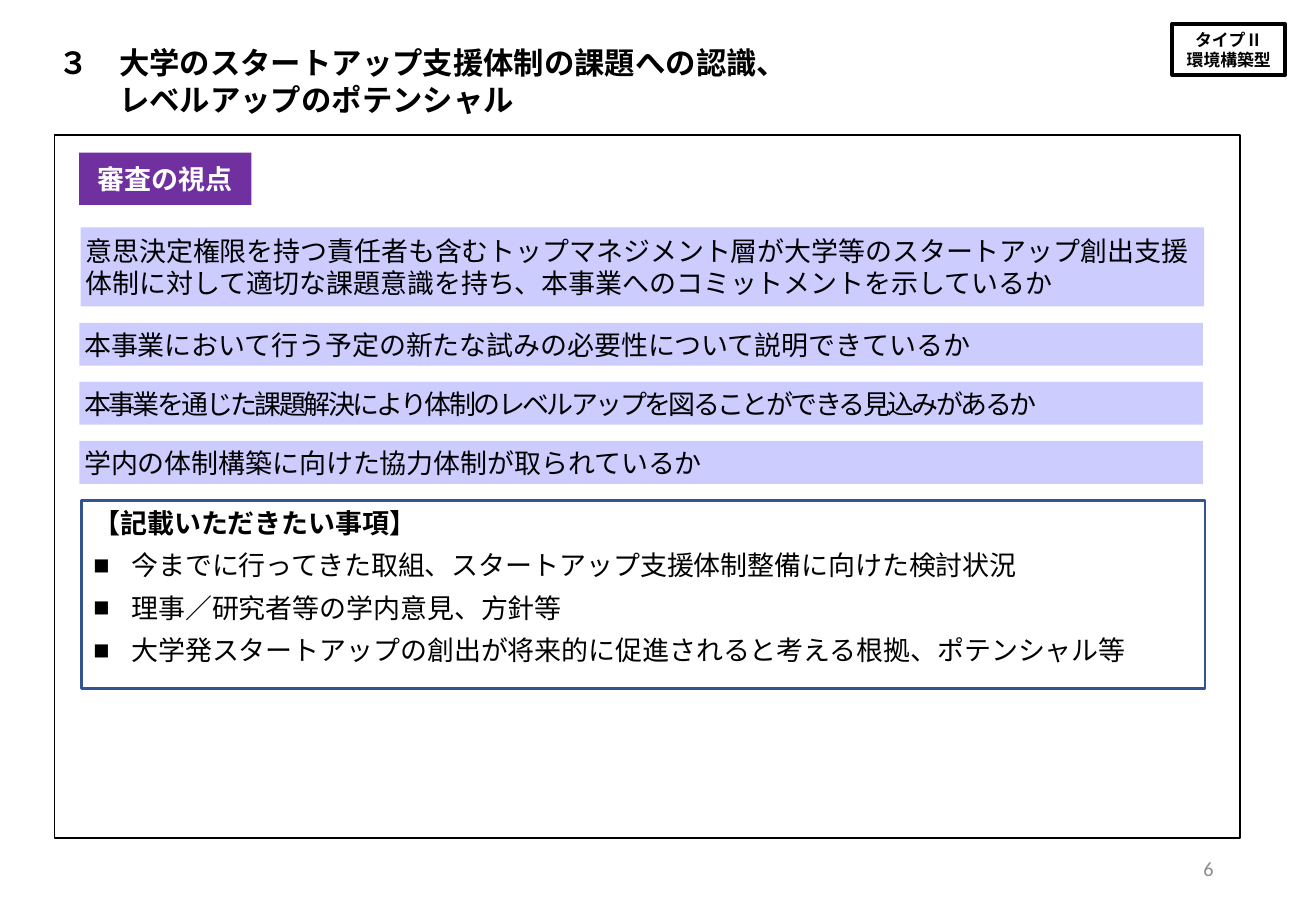
from dataclasses import dataclass

from lxml.etree import SubElement
from pptx import Presentation
from pptx.dml.color import RGBColor
from pptx.enum.shapes import MSO_SHAPE
from pptx.enum.text import MSO_ANCHOR, MSO_AUTO_SIZE, PP_ALIGN
from pptx.oxml.ns import qn
from pptx.util import Pt


@dataclass(frozen=True)
class Theme:
    black: str = "000000"
    white: str = "FFFFFF"
    purple: str = "7030A0"
    lavender: str = "CCCCFF"
    blue: str = "325491"
    gray: str = "8C8C8C"
    heading: int = 18
    body: int = 16
    number: int = 12
    badge: int = 10
    latin: str = "Arial"
    title: str = "Calibri"
    east_asian: str = "Calibri"
    criterion: str = "Noto Sans CJK JP"


THEME = Theme()
INSET = 2.88

CRITERIA = [
    ("本事業において行う予定の新たな試みの必要性について説明できているか", THEME.title, 0),
    ("本事業を通じた課題解決により体制のレベルアップを図ることができる見込みがあるか", THEME.title, -1.5),
    ("学内の体制構築に向けた協力体制が取られているか", THEME.latin, 0),
]
ITEMS = [
    "今までに行ってきた取組、スタートアップ支援体制整備に向けた検討状況",
    "理事／研究者等の学内意見、方針等",
    "大学発スタートアップの創出が将来的に促進されると考える根拠、ポテンシャル等",
]


def place(sp, left, top, width, height):
    sp.left, sp.top, sp.width, sp.height = Pt(left), Pt(top), Pt(width), Pt(height)


def style(p, size, color, font=THEME.latin, bold=False, align=PP_ALIGN.LEFT, spacing=0):
    p.alignment = align
    p.font.size = Pt(size)
    p.font.bold = bold
    p.font.name = font
    p.font.color.rgb = RGBColor.from_string(color)
    props = p.font._element
    SubElement(props, qn("a:ea")).set("typeface", THEME.east_asian)
    if spacing:
        props.set("spc", str(int(spacing * 100)))


def write(sp, lines, size, color, inset=INSET, anchor=MSO_ANCHOR.MIDDLE, **look):
    tf = sp.text_frame
    tf.word_wrap = True
    tf.auto_size = MSO_AUTO_SIZE.NONE
    tf.vertical_anchor = anchor
    if inset is not None:
        tf.margin_left = tf.margin_right = tf.margin_top = tf.margin_bottom = Pt(inset)
    tf.text = "\n".join(lines)
    for p in tf.paragraphs:
        style(p, size, color, **look)


def paint(sp, fill=None, line=None, weight=1):
    if fill:
        sp.fill.solid()
        sp.fill.fore_color.rgb = RGBColor.from_string(fill)
    else:
        sp.fill.background()
    if line:
        sp.line.color.rgb = RGBColor.from_string(line)
        sp.line.width = Pt(weight)
    else:
        sp.line.fill.background()


def add_box(s, box, **look):
    sp = s.shapes.add_shape(MSO_SHAPE.RECTANGLE, *map(Pt, box))
    sp.shadow.inherit = False
    paint(sp, **look)
    return sp


def add_frame(s):
    frame = add_box(s, (32.4, 80, 702.7, 416.9), fill=THEME.white, line=THEME.black)
    s.shapes._spTree.insert(2, frame._element)


def add_criterion(s, box, text, font, spacing=0):
    sp = add_box(s, box, fill=THEME.lavender)
    write(sp, [text], THEME.body, THEME.black, font=font, spacing=spacing)


def set_bullet(p, indent, char=None):
    props = p._p.get_or_add_pPr()
    props.set("marL", str(Pt(indent)))
    props.set("indent", str(-Pt(indent)))
    if char:
        SubElement(props, qn("a:buFont")).set("typeface", THEME.latin)
        SubElement(props, qn("a:buChar")).set("char", char)
    else:
        SubElement(props, qn("a:buNone"))


def fill_requests(sp):
    place(sp, 48.2, 296.6, 666, 111.6)
    paint(sp, fill=THEME.white, line=THEME.blue, weight=1.5)
    tf = sp.text_frame
    tf.word_wrap = True
    tf.auto_size = MSO_AUTO_SIZE.NONE
    tf.vertical_anchor = MSO_ANCHOR.TOP
    tf.text = "\n".join(["【記載いただきたい事項】", *ITEMS])
    for i, p in enumerate(tf.paragraphs):
        set_bullet(p, 22.5 if i else 0, "■" if i else None)
        p.space_before = Pt(6 if i else 12)
        style(p, THEME.body, THEME.black, bold=i == 0)


def main():
    prs = Presentation()
    prs.slide_width, prs.slide_height = Pt(780), Pt(540)
    s = prs.slides.add_slide(prs.slide_layouts[1])
    add_frame(s)

    title = s.shapes.title
    place(title, 31.7, 23, 531.4, 49.7)
    write(title, ["３　大学のスタートアップ支援体制の課題への認識、", "　　レベルアップのポテンシャル"],
          THEME.heading, THEME.black, font=THEME.title, bold=True)

    badge = add_box(s, (694.8, 14.2, 67, 30.2), line=THEME.black, weight=2.25)
    write(badge, ["タイプⅡ", "環境構築型"], THEME.badge, THEME.black, bold=True, align=PP_ALIGN.CENTER)

    label = add_box(s, (47, 90.5, 102, 31), fill=THEME.purple)
    write(label, ["審査の視点"], THEME.body, THEME.white, bold=True, align=PP_ALIGN.CENTER)

    add_criterion(s, (47.8, 134.8, 666, 46.8),
                  "意思決定権限を持つ責任者も含むトップマネジメント層が大学等のスタートアップ創出支援"
                  "体制に対して適切な課題意識を持ち、本事業へのコミットメントを示しているか",
                  THEME.criterion)
    for i, (text, font, spacing) in enumerate(CRITERIA):
        add_criterion(s, (47, 191.4 + 35 * i, 666, 25.4), text, font, spacing)

    fill_requests(s.placeholders[1])

    number = s.shapes.add_textbox(Pt(550.8), Pt(500.4), Pt(175.7), Pt(28.8))
    write(number, ["6"], THEME.number, THEME.gray, inset=None, font=THEME.title, align=PP_ALIGN.RIGHT)

    prs.save("out.pptx")


if __name__ == "__main__":
    main()
